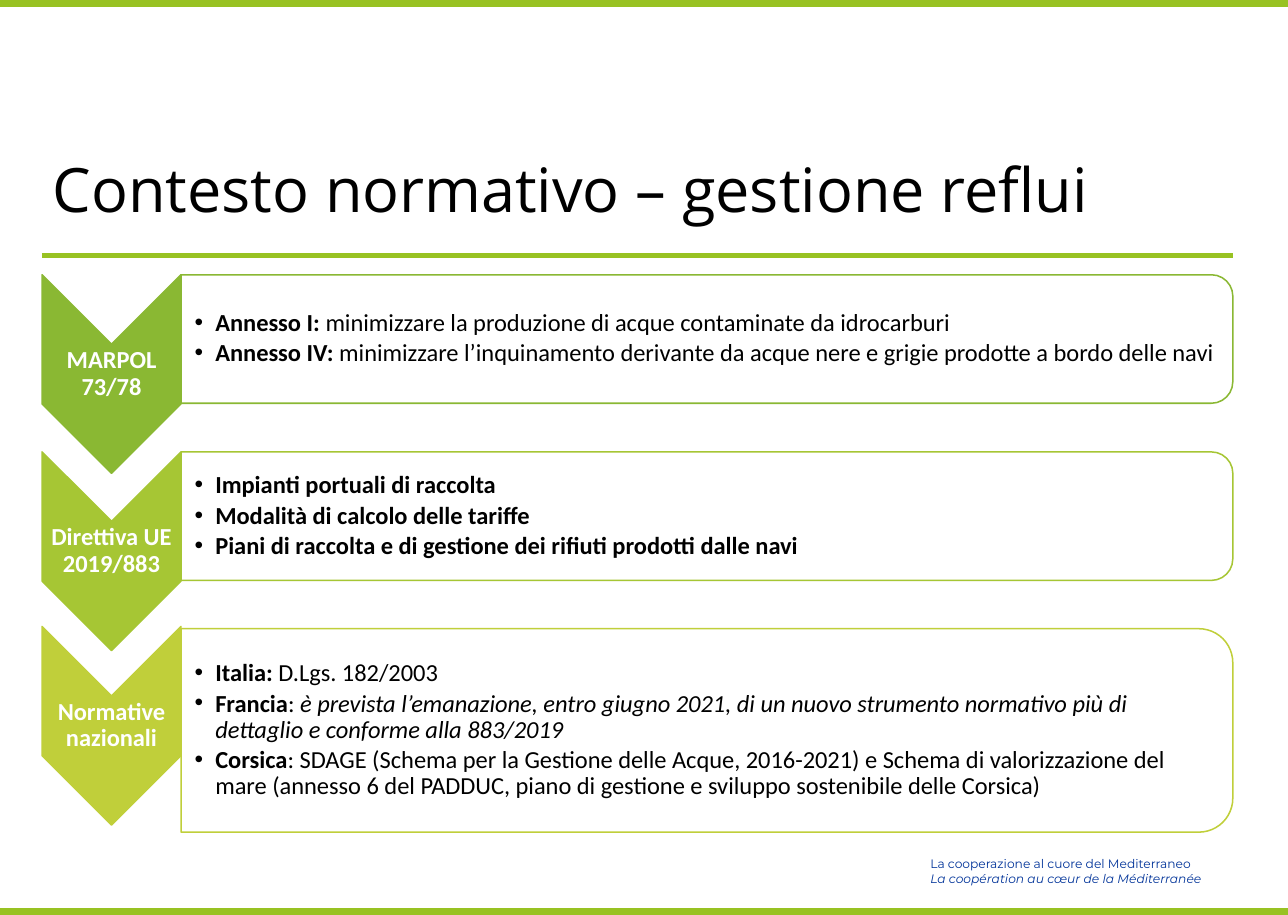
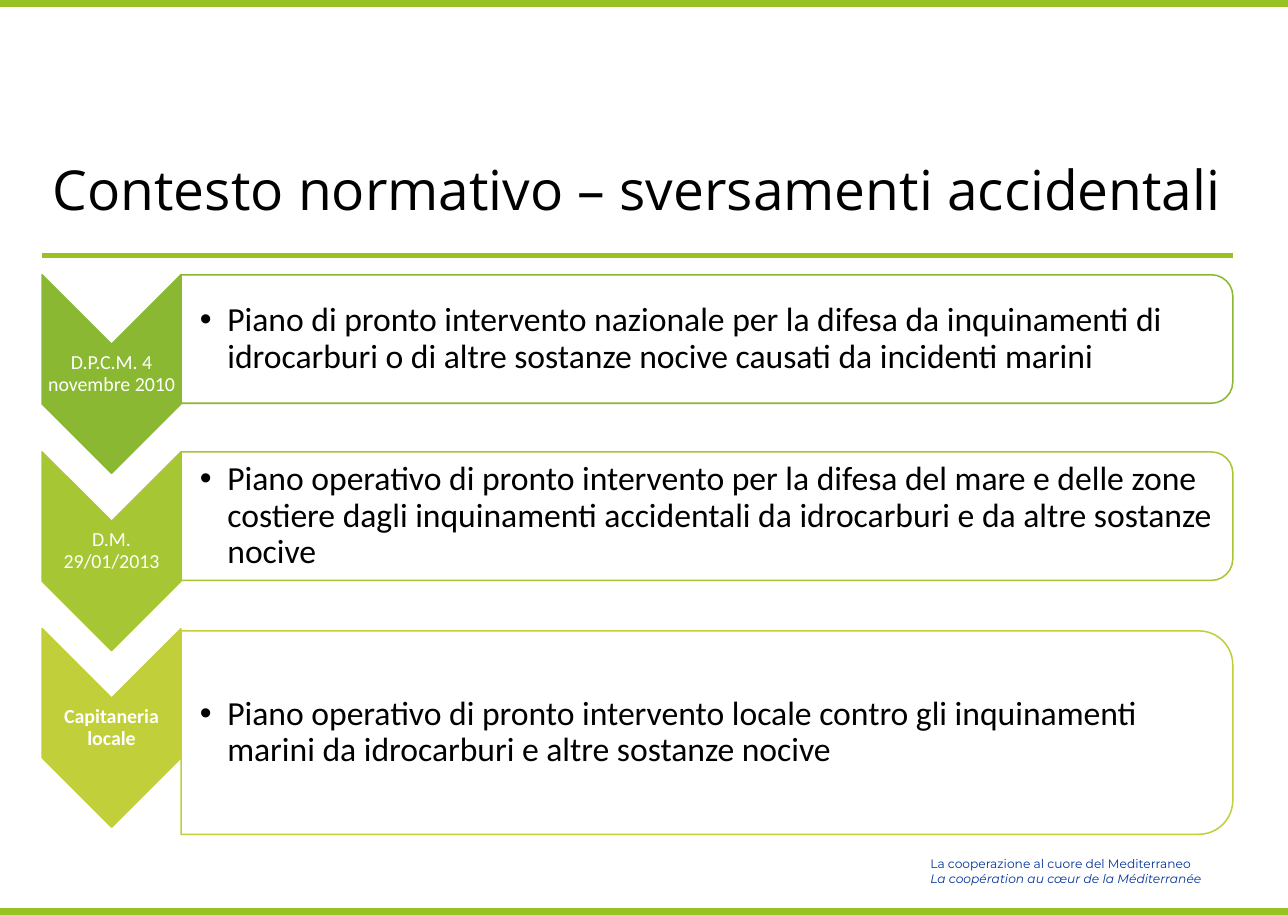
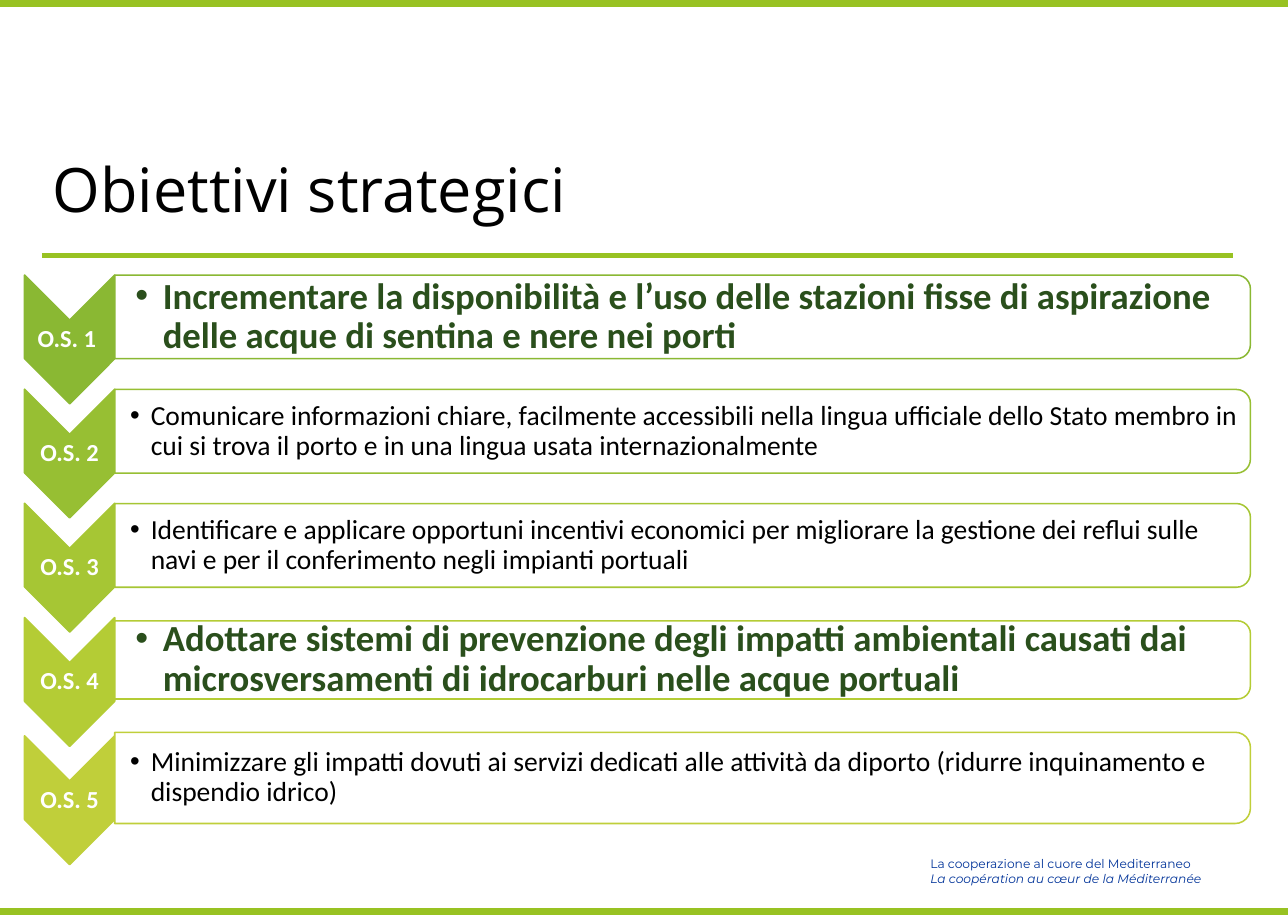
from lxml import etree
from pptx import Presentation
from pptx.dml.color import RGBColor
from pptx.enum.shapes import MSO_CONNECTOR, MSO_SHAPE
from pptx.enum.text import MSO_ANCHOR, PP_ALIGN
from pptx.oxml.ns import qn
from pptx.util import Pt

LINE = MSO_CONNECTOR.STRAIGHT
ARROW = MSO_SHAPE.CHEVRON
PANEL = MSO_SHAPE.ROUND_2_SAME_RECTANGLE
MID, TOP = MSO_ANCHOR.MIDDLE, MSO_ANCHOR.TOP
LEFT, MIDDLE = PP_ALIGN.LEFT, PP_ALIGN.CENTER

WIDE, HIGH = 841.88, 598.12
BAND, BLUE, DARK = "98C222", "003399", "2A4F1C"
BLACK, WHITE = "000000", "FFFFFF"
GREENS = ["8AB833", "97BF33", "A6C634", "B4CC35", "C0CF3A"]


def rgb(code):
    return RGBColor.from_string(code)


class Deck:
    """Holds the shared style and the current slide."""

    def __init__(self):
        self.prs = Presentation()
        self.prs.slide_width, self.prs.slide_height = Pt(WIDE), Pt(HIGH)
        self.slide = None

    def page(self, title, size=40):
        self.slide = self.prs.slides.add_slide(self.prs.slide_layouts[6])
        self.rule(0, WIDE, 1.5, 6)
        self.rule(0, WIDE, HIGH - 1.5, 6)
        self.rule(27.4, 805.7, 167, 3)
        self.text((601, 556.4, 205.2, 26.6),
                  [[("La cooperazione al cuore del Mediterraneo", "")],
                   [("La coopération au cœur de la Méditerranée", "i")]],
                  8, BLUE, "Montserrat", anchor=TOP, space=1)
        self.text((27.4, 92.9, 778.5, 66.2), [[(title, "")]], size,
                  BLACK, "Open Sans")

    def rule(self, left, right, y, width):
        line = self.slide.shapes.add_connector(
            LINE, Pt(left), Pt(y), Pt(right), Pt(y))
        line.line.color.rgb = rgb(BAND)
        line.line.width = Pt(width)
        etree.SubElement(line._element.spPr, qn("a:effectLst"))

    def turned(self, kind, area, fill, edge):
        x, y, w, h = area
        shape = self.slide.shapes.add_shape(
            kind, Pt(x + (w - h) / 2), Pt(y + (h - w) / 2), Pt(h), Pt(w))
        shape.rotation = 90
        shape.shadow.inherit = False
        shape.fill.solid()
        shape.fill.fore_color.rgb = rgb(fill)
        shape.line.color.rgb = rgb(edge)
        shape.line.width = Pt(1)

    def text(self, area, paras, size, color, font="Calibri", anchor=MID,
             align=LEFT, pad=(7.2, 3.6, 7.2, 3.6), space=0.9, hang=0):
        frame = self.slide.shapes.add_textbox(*map(Pt, area)).text_frame
        frame.word_wrap = True
        frame.vertical_anchor = anchor
        (frame.margin_left, frame.margin_top,
         frame.margin_right, frame.margin_bottom) = map(Pt, pad)
        frame.text = "\n".join("" for _ in paras)
        for para, runs in zip(frame.paragraphs, paras):
            if hang:
                self.bullet(para, hang)
                para.space_after = Pt(size * 0.15)
            para.alignment = align
            para.line_spacing = space
            for words, style in runs:
                run = para.add_run()
                run.text = words
                run.font.name, run.font.size = font, Pt(size)
                run.font.bold, run.font.italic = "b" in style, "i" in style
                run.font.color.rgb = rgb(color)

    def bullet(self, para, hang):
        props = para._p.get_or_add_pPr()
        props.set("marL", str(Pt(hang)))
        props.set("indent", str(-Pt(hang)))
        etree.SubElement(props, qn("a:buFont")).set("typeface", "Arial")
        etree.SubElement(props, qn("a:buChar")).set("char", "•")

    def label(self, area, words, size, style, fill):
        x, y, w, h = area
        self.turned(ARROW, area, fill, fill)
        self.text((x, y + w / 2, w, h - w), [[(words, style)]], size, WHITE,
                  align=MIDDLE, pad=(1, 1, 1, 1))

    def panel(self, area, paras, size, color, edge):
        x, y, w, h = area
        gap = h * 0.05
        self.turned(PANEL, area, WHITE, edge)
        self.text((x, y + gap, w - gap, h - 2 * gap), paras, size, color,
                  pad=(size * 0.56, 1, 1, 1), hang=13.5 if size < 20 else 18)


def norms(deck, rows, last, tag, size):
    tops = (179.6, 295.4, last)
    for top, high, green, row in zip(tops, (84, 84, 133), GREENS[::2], rows):
        words, style, paras = row
        drop = 1.5 if top == last else 0
        deck.label((27.5, top, 90.8, 129.8), words, tag, style, green)
        deck.panel((118.3, top + drop, 687.5, high), paras, size, BLACK, green)


def goals(deck, rows):
    spots = [(179.8, 179.8, 54.7), (254.4, 254.6, 54.7), (329, 329.2, 54.7),
             (403.7, 405.8, 51.1), (481, 478.7, 59.6)]
    for (top, start, high), green, row in zip(spots, GREENS, rows):
        words, aim, key = row
        size, color, style = (24, DARK, "b") if key else (18, BLACK, "")
        deck.label((16, top, 59, 84.2), words, 16, "b", green)
        deck.panel((75, start, 742.3, high), [[(aim, style)]], size, color,
                   green)


WASTE = [
    ("MARPOL 73/78", "b", [
        [("Annesso I: ", "b"),
         ("minimizzare la produzione di acque contaminate da idrocarburi", "")],
        [("Annesso IV: ", "b"),
         ("minimizzare l’inquinamento derivante da acque nere e grigie "
          "prodotte a bordo delle navi", "")]]),
    ("Direttiva UE 2019/883", "b", [
        [("Impianti portuali di raccolta", "b")],
        [("Modalità di calcolo delle tariffe", "b")],
        [("Piani di raccolta e di gestione dei rifiuti prodotti dalle navi",
          "b")]]),
    ("Normative nazionali", "b", [
        [("Italia: ", "b"), ("D.Lgs. 182/2003", "")],
        [("Francia", "b"), (": ", ""),
         ("è prevista l’emanazione, entro giugno 2021, di un nuovo strumento "
          "normativo più di dettaglio e conforme alla 883/2019", "i")],
        [("Corsica", "b"),
         (": SDAGE (Schema per la Gestione delle Acque, 2016-2021) e Schema "
          "di valorizzazione del mare (annesso 6 del PADDUC, piano di "
          "gestione e sviluppo sostenibile delle Corsica)", "")]]),
]
SPILLS = [
    ("D.P.C.M. 4 novembre 2010", "", [[
        ("Piano di pronto intervento nazionale per la difesa da inquinamenti "
         "di idrocarburi o di altre sostanze nocive causati da incidenti "
         "marini", "")]]),
    ("D.M. 29/01/2013", "", [[
        ("Piano operativo di pronto intervento per la difesa del mare e delle "
         "zone costiere dagli inquinamenti accidentali da idrocarburi e da "
         "altre sostanze nocive", "")]]),
    ("Capitaneria locale", "b", [[
        ("Piano operativo di pronto intervento locale contro gli inquinamenti "
         "marini da idrocarburi e altre sostanze nocive", "")]]),
]
AIMS = [
    ("O.S. 1 ", "Incrementare la disponibilità e l’uso delle stazioni fisse "
     "di aspirazione delle acque di sentina e nere nei porti", True),
    ("O.S. 2", "Comunicare informazioni chiare, facilmente accessibili nella "
     "lingua ufficiale dello Stato membro in cui si trova il porto e in una "
     "lingua usata internazionalmente", False),
    ("O.S. 3", "Identificare e applicare opportuni incentivi economici per "
     "migliorare la gestione dei reflui sulle navi e per il conferimento "
     "negli impianti portuali", False),
    ("O.S. 4", "Adottare sistemi di prevenzione degli impatti ambientali "
     "causati dai microsversamenti di idrocarburi nelle acque portuali", True),
    ("O.S. 5", "Minimizzare gli impatti dovuti ai servizi dedicati alle "
     "attività da diporto (ridurre inquinamento e dispendio idrico)", False),
]


def main():
    deck = Deck()
    deck.page("Contesto normativo – gestione reflui")
    norms(deck, WASTE, 409.5, 16, 16)
    deck.page("Contesto normativo – sversamenti accidentali", 36)
    norms(deck, SPILLS, 410.9, 13, 22)
    deck.page("Obiettivi strategici")
    goals(deck, AIMS)
    deck.prs.save("out.pptx")


if __name__ == "__main__":
    main()
